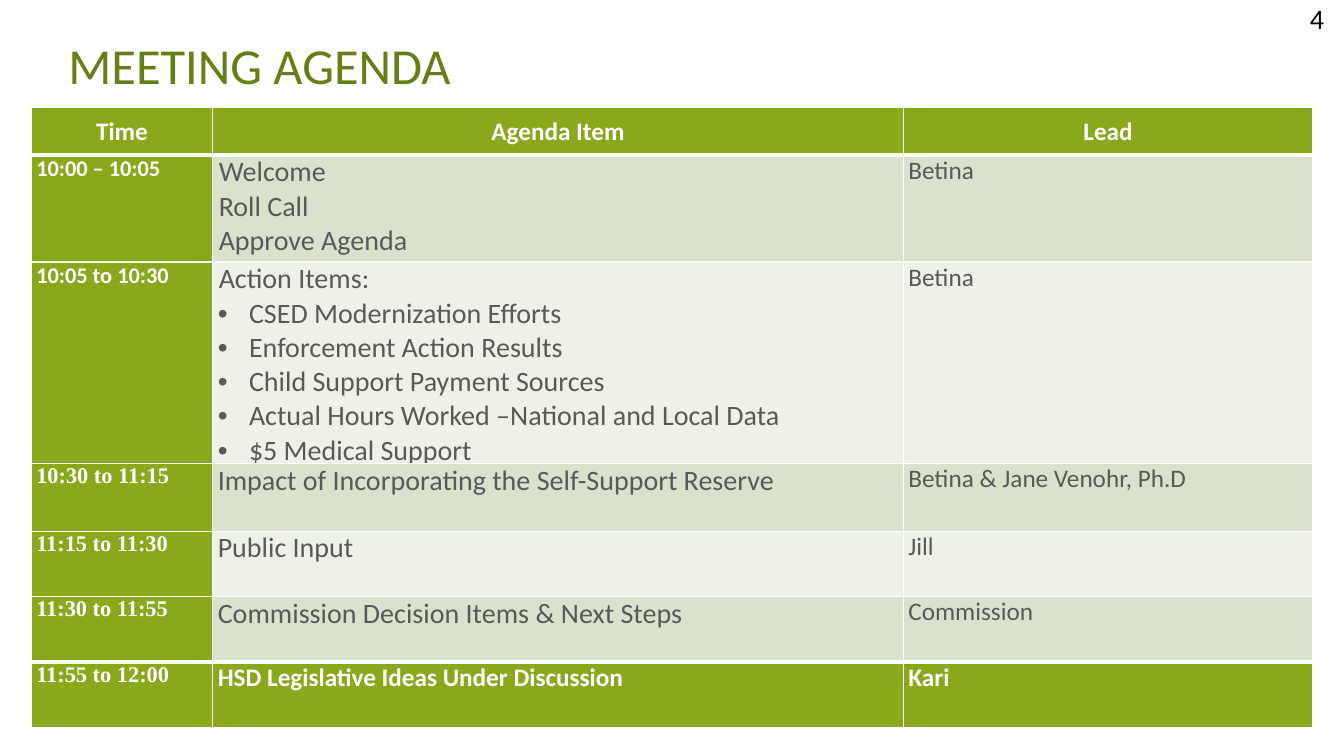
"""Build the meeting agenda slide."""
from dataclasses import dataclass

import lxml.etree
import pptx
import pptx.dml.color
import pptx.enum.text
import pptx.oxml.ns
import pptx.util

Inches = pptx.util.Inches
Align = pptx.enum.text.PP_ALIGN
Anchor = pptx.enum.text.MSO_ANCHOR
qn = pptx.oxml.ns.qn

GREEN, WHITE, GRAY = "87A91B", "FFFFFF", "595959"
BANDS = ("D9E2CD", "EDF1E8")
SERIF = "Times New Roman"
COLUMN_WIDTHS = (1.8, 6.85, 4.06)
HEADINGS = ("Time", "Agenda Item", "Lead")
HEADING_HEIGHT = 0.47


@dataclass
class AgendaRow:
    time: str
    items: list[str]
    lead: str
    height: float
    time_font: str = SERIF
    indent: float = 0
    bullets: tuple[str, ...] = ()


AGENDA = [
    AgendaRow("10:00 – 10:05", ["Welcome", "Roll Call", "Approve Agenda"], "Betina",
              1.06, "Calibri", 0.01),
    AgendaRow("10:05 to 10:30", ["Action Items:"], "Betina", 1.76, "Calibri", 0.01,
              ("CSED Modernization Efforts", "Enforcement Action Results",
               "Child Support Payment Sources",
               "Actual Hours Worked –National and Local Data", "$5 Medical Support")),
    AgendaRow("10:30 to 11:15", ["Impact of Incorporating the Self-Support Reserve"],
              "Betina & Jane Venohr, Ph.D", 0.67),
    AgendaRow("11:15 to 11:30", ["Public Input"], "Jill", 0.65),
    AgendaRow("11:30 to 11:55", ["Commission Decision Items & Next Steps"],
              "Commission", 0.65),
    AgendaRow("11:55 to 12:00", ["HSD Legislative Ideas Under Discussion"], "Kari", 0.65),
]


def color(value: str) -> pptx.dml.color.RGBColor:
    return pptx.dml.color.RGBColor.from_string(value)


def write(frame, text: str, *, size: float, fill: str, font: str = "Calibri",
          bold: bool = False, align=Align.LEFT, margin: float = 0, indent: float = 0,
          bullet: str = "", spacing: float = 1) -> None:
    para = frame.add_paragraph() if frame.text else frame.paragraphs[0]
    para.alignment = align
    para.line_spacing = spacing
    properties = para._p.get_or_add_pPr()
    properties.set("marL", str(Inches(margin)))
    properties.set("indent", str(Inches(indent)))
    if bullet:
        lxml.etree.SubElement(properties, qn("a:buFont")).set("typeface", "Arial")
        lxml.etree.SubElement(properties, qn("a:buChar")).set("char", bullet)
    span = para.add_run()
    span.text = text
    span.font.size = pptx.util.Pt(size)
    span.font.name = font
    span.font.bold = bold
    span.font.color.rgb = color(fill)


def add_box(page, left: float, top: float, width: float, height: float, anchor):
    box = page.shapes.add_textbox(Inches(left), Inches(top), Inches(width), Inches(height))
    frame = box.text_frame
    frame.word_wrap = True
    frame.vertical_anchor = anchor
    return frame


def style_cell(cell, fill: str, top: float, bottom: float, anchor=Anchor.TOP) -> None:
    cell.margin_left = cell.margin_right = Inches(0.05)
    cell.margin_top = cell.margin_bottom = 0
    cell.vertical_anchor = anchor
    properties = cell._tc.get_or_add_tcPr()
    for side, width in (("L", 1), ("R", 1), ("T", top), ("B", bottom)):
        line = lxml.etree.SubElement(properties, qn(f"a:ln{side}"))
        line.set("w", str(pptx.util.Pt(width)))
        paint = lxml.etree.SubElement(line, qn("a:solidFill"))
        lxml.etree.SubElement(paint, qn("a:srgbClr")).set("val", WHITE)
    cell.fill.solid()
    cell.fill.fore_color.rgb = color(fill)


def fill_row(table, number: int, row: AgendaRow) -> None:
    last = number == len(AGENDA)
    band = GREEN if last else BANDS[(number - 1) % 2]
    ink = WHITE if last else GRAY
    top = 3 if number == 1 or last else 1
    bottom = 3 if number == len(AGENDA) - 1 else 1
    time, item, lead = table.rows[number].cells
    for cell, fill in ((time, GREEN), (item, band), (lead, band)):
        style_cell(cell, fill, top, bottom)
    write(time.text_frame, row.time, size=16, fill=WHITE, font=row.time_font, bold=True)
    item_size = 18 if last else 20
    for text in row.items:
        write(item.text_frame, text, size=item_size, fill=ink, bold=last, indent=row.indent)
    for text in row.bullets:
        write(item.text_frame, text, size=item_size, fill=ink, margin=0.31, indent=-0.31,
              bullet="•")
    write(lead.text_frame, row.lead, size=18, fill=ink, bold=last)


def add_agenda(page) -> None:
    heights = [HEADING_HEIGHT] + [row.height for row in AGENDA]
    table = page.shapes.add_table(
        len(heights), len(COLUMN_WIDTHS), Inches(0.31), Inches(1.07),
        Inches(sum(COLUMN_WIDTHS)), Inches(sum(heights))).table
    table.horz_banding = False
    for column, width in zip(table.columns, COLUMN_WIDTHS):
        column.width = Inches(width)
    for line, height in zip(table.rows, heights):
        line.height = Inches(height)
    for cell, text in zip(table.rows[0].cells, HEADINGS):
        style_cell(cell, GREEN, 1, 3, Anchor.MIDDLE)
        write(cell.text_frame, text, size=18, fill=WHITE, bold=True, align=Align.CENTER)
    for number, row in enumerate(AGENDA, 1):
        fill_row(table, number, row)


def main() -> None:
    deck = pptx.Presentation()
    deck.slide_width, deck.slide_height = Inches(13.33), Inches(7.5)
    page = deck.slides.add_slide(deck.slide_layouts[6])
    title = add_box(page, 0.58, 0.36, 12.17, 1.25, Anchor.TOP)
    write(title, "MEETING AGENDA", size=36, fill="657F14", spacing=0.9)
    add_agenda(page)
    page_number = add_box(page, 12.64, 0, 0.59, 0.36, Anchor.MIDDLE)
    write(page_number, "4", size=20, fill="000000", align=Align.RIGHT)
    deck.save("out.pptx")


if __name__ == "__main__":
    main()
